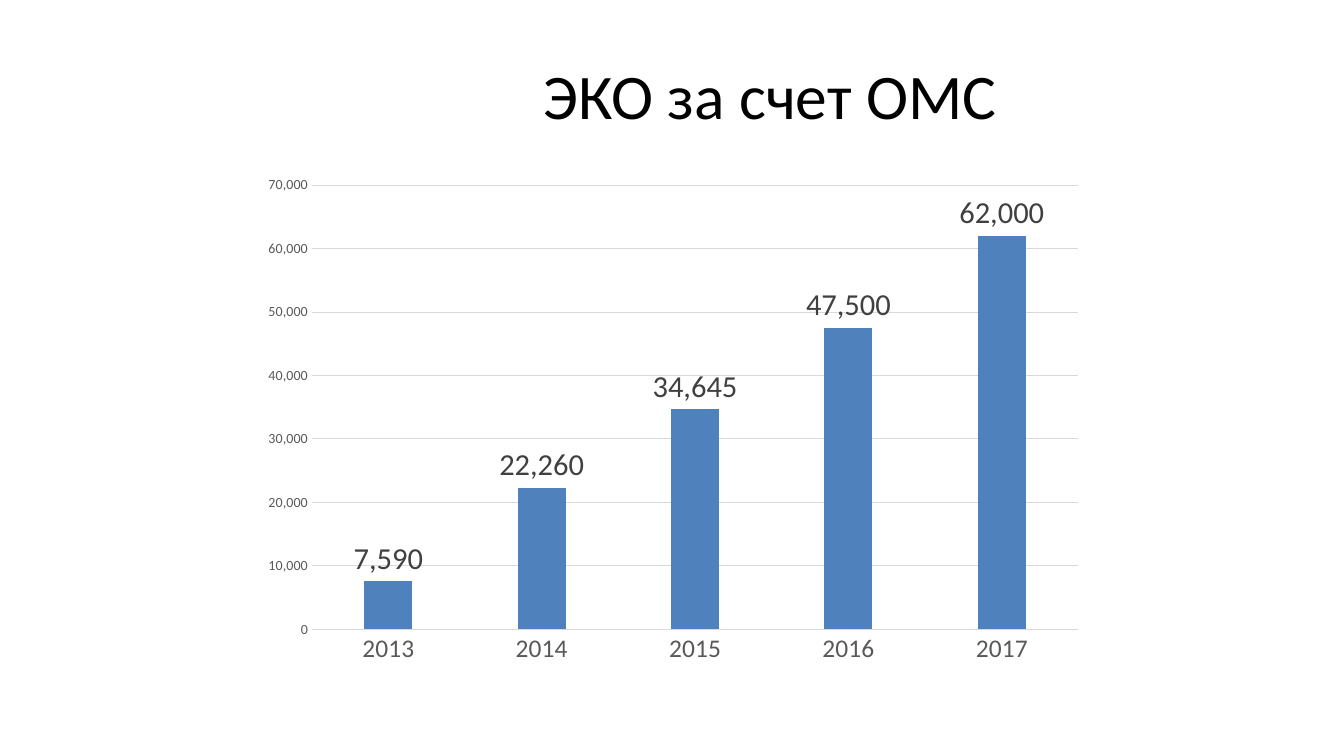
from pptx import Presentation
from pptx.chart.data import CategoryChartData
from pptx.dml.color import RGBColor
from pptx.enum.chart import XL_CHART_TYPE as ChartType
from pptx.enum.chart import XL_LABEL_POSITION as LabelPosition
from pptx.enum.chart import XL_TICK_MARK as TickMark
from pptx.enum.text import MSO_ANCHOR as Anchor
from pptx.enum.text import PP_ALIGN as Align
from pptx.util import Pt

FONT = "Calibri"
GRID = "D9D9D9"
AXIS_TEXT = "595959"
CYCLES_BY_YEAR = {
    "2013": 7590,
    "2014": 22260,
    "2015": 34645,
    "2016": 47500,
    "2017": 62000,
}


def rgb(color):
    """Turn a hex string into a colour."""
    return RGBColor.from_string(color)


def set_font(font, size, color):
    """Set typeface, size and colour of a font."""
    font.name = FONT
    font.size = Pt(size)
    font.color.rgb = rgb(color)


def set_line(line, color):
    """Give a line its colour and a thin width."""
    line.color.rgb = rgb(color)
    line.width = Pt(0.75)


def set_title(slide, text, left, top, width, height):
    """Place, fill and format the title placeholder."""
    title = slide.shapes.title
    title.left, title.top = Pt(left), Pt(top)
    title.width, title.height = Pt(width), Pt(height)
    frame = title.text_frame
    frame.text = text
    frame.word_wrap = True
    frame.vertical_anchor = Anchor.MIDDLE
    frame.margin_left = frame.margin_right = Pt(7.9)
    frame.margin_top = frame.margin_bottom = Pt(4)
    paragraph = frame.paragraphs[0]
    paragraph.alignment = Align.CENTER
    set_font(paragraph.font, 50, "000000")


def format_axis(axis, size):
    """Remove the tick marks of an axis and set its label font."""
    axis.major_tick_mark = axis.minor_tick_mark = TickMark.NONE
    set_font(axis.tick_labels.font, size, AXIS_TEXT)


def format_axes(chart):
    """Format the year axis and the value axis with its grid."""
    years, values = chart.category_axis, chart.value_axis
    format_axis(years, 20)
    set_line(years.format.line, GRID)
    format_axis(values, 11)
    values.format.line.fill.background()
    values.minimum_scale, values.maximum_scale = 0, 70000
    values.major_unit = 10000
    values.has_major_gridlines = True
    set_line(values.major_gridlines.format.line, GRID)
    values.tick_labels.number_format = "#,##0"
    values.tick_labels.number_format_is_linked = False


def format_columns(plot):
    """Set column spacing, fill and value labels."""
    plot.gap_width, plot.overlap = 219, -27
    plot.vary_by_categories = False
    series = plot.series[0]
    series.format.fill.solid()
    series.format.fill.fore_color.rgb = rgb("4F81BD")
    labels = series.data_labels
    labels.show_value = True
    labels.position = LabelPosition.OUTSIDE_END
    labels.number_format = "#,##0"
    labels.number_format_is_linked = False
    set_font(labels.font, 24, "404040")


def add_column_chart(slide, values_by_year, left, top, width, height):
    """Add a column chart with one column per year."""
    data = CategoryChartData(number_format="#,##0")
    data.categories = list(values_by_year)
    data.add_series("Series 1", list(values_by_year.values()))
    chart = slide.shapes.add_chart(
        ChartType.COLUMN_CLUSTERED, Pt(left), Pt(top), Pt(width), Pt(height), data
    ).chart
    chart.has_title = chart.has_legend = False
    set_font(chart.font, 10, "000000")
    format_axes(chart)
    format_columns(chart.plots[0])


def main():
    """Build the slide and save it."""
    presentation = Presentation()
    presentation.slide_width = Pt(1058.4)
    presentation.slide_height = Pt(595.4)
    slide = presentation.slides.add_slide(presentation.slide_layouts[5])
    set_title(slide, "ЭКО за счет ОМС", 322.6, 37.4, 568, 74.2)
    add_column_chart(slide, CYCLES_BY_YEAR, 198, 131, 664.6, 400.3)
    presentation.save("out.pptx")


if __name__ == "__main__":
    main()
